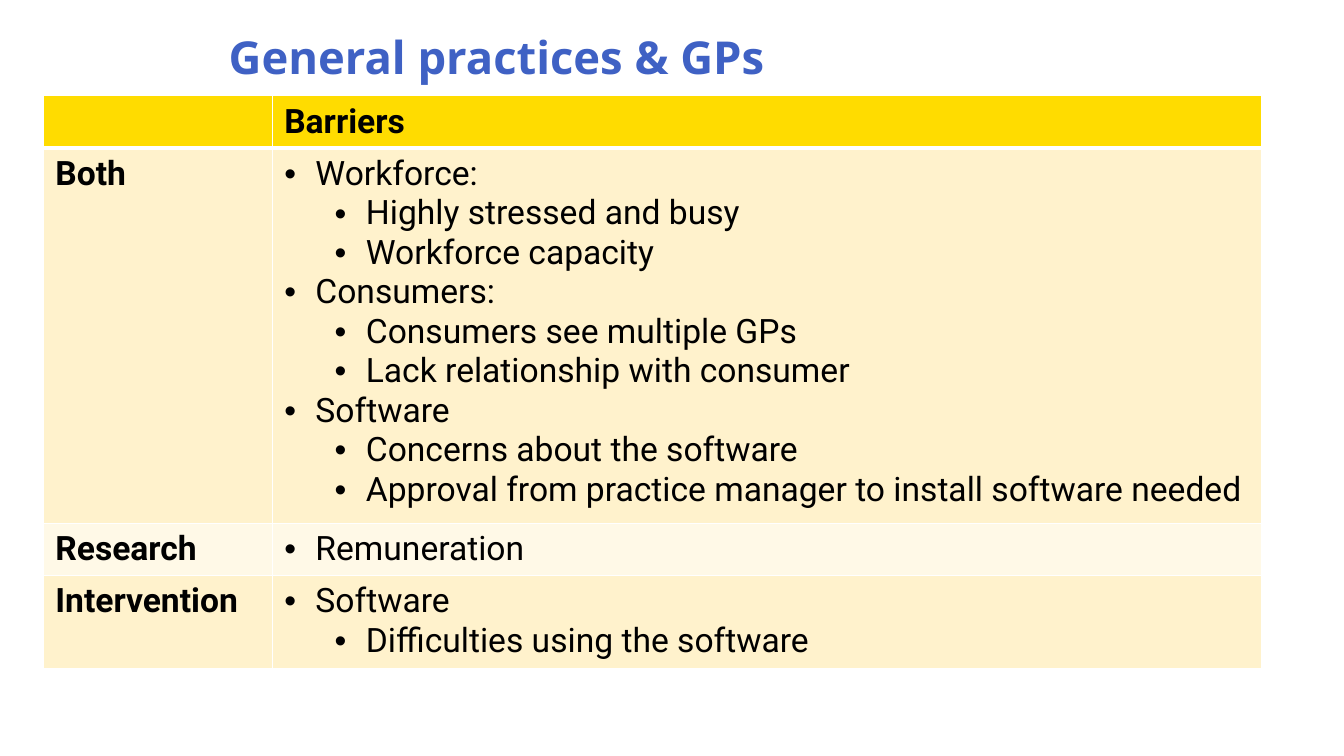
from lxml import etree
from pptx import Presentation
from pptx.dml.color import RGBColor
from pptx.enum.text import MSO_ANCHOR
from pptx.oxml.ns import qn
from pptx.util import Inches, Pt

MIDDLE = MSO_ANCHOR.MIDDLE

COLORS = {
    "title": "3F61C4",
    "text": "000000",
    "header": "FFDC00",
    "band": "FFF2CC",
    "light": "FFF9E7",
    "border": "FFFFFF",
}
COLUMN_WIDTHS = [2.27, 9.81]
ROW_HEIGHTS = [0.49, 3.63, 0.51, 0.9]
ROW_FILLS = ["header", "band", "light", "band"]
BARRIERS = [
    ("Both", [
        (0, "Workforce:"),
        (1, "Highly stressed and busy"),
        (1, "Workforce capacity"),
        (0, "Consumers:"),
        (1, "Consumers see multiple GPs"),
        (1, "Lack relationship with consumer"),
        (0, "Software"),
        (1, "Concerns about the software"),
        (1, "Approval from practice manager to install software needed"),
    ]),
    ("Research", [(0, "Remuneration")]),
    ("Intervention", [(0, "Software"), (1, "Difficulties using the software")]),
]


class SlideBuilder:
    """Holds the style and the current slide, and adds elements to it."""

    title_font = "Open Sans"
    body_font = "Roboto"
    body_size = 24

    def __init__(self, presentation):
        self.slide = presentation.slides.add_slide(presentation.slide_layouts[6])

    def style(self, paragraph, name, size, color, bold):
        font = paragraph.font
        font.name = name
        font.size = Pt(size)
        font.bold = bold
        font.color.rgb = RGBColor.from_string(COLORS[color])

    def title(self, text, left, top, width, height):
        shape = self.slide.shapes.add_textbox(
            Inches(left), Inches(top), Inches(width), Inches(height))
        frame = shape.text_frame
        frame.word_wrap = True
        frame.vertical_anchor = MIDDLE
        paragraph = frame.paragraphs[0]
        paragraph.text = text
        paragraph.line_spacing = 0.9
        self.style(paragraph, self.title_font, 32.4, "title", True)

    def bullet(self, paragraph, level):
        paragraph.level = level
        properties = paragraph._p.get_or_add_pPr()
        properties.set("marL", str(Inches(0.31 + 0.5 * level)))
        properties.set("indent", str(Inches(-0.31)))
        etree.SubElement(properties, qn("a:buFont")).set("typeface", "Arial")
        etree.SubElement(properties, qn("a:buChar")).set("char", "•")

    def borders(self, cell, is_header, is_below_header):
        properties = cell._tc.get_or_add_tcPr()
        widths = {"L": 1, "R": 1, "T": 3 if is_below_header else 1,
                  "B": 3 if is_header else 1}
        for side, width in widths.items():
            line = etree.SubElement(properties, qn(f"a:ln{side}"))
            line.set("w", str(Pt(width)))
            fill = etree.SubElement(line, qn("a:solidFill"))
            etree.SubElement(fill, qn("a:srgbClr")).set("val", COLORS["border"])

    def cell(self, cell, row, items, bold):
        cell.margin_left = cell.margin_right = Inches(0.12)
        cell.margin_top = cell.margin_bottom = Inches(0.06)
        self.borders(cell, row == 0, row == 1)
        cell.fill.solid()
        cell.fill.fore_color.rgb = RGBColor.from_string(COLORS[ROW_FILLS[row]])
        frame = cell.text_frame
        for index, (level, text) in enumerate(items):
            paragraph = frame.add_paragraph() if index else frame.paragraphs[0]
            paragraph.text = text
            if level is not None:
                self.bullet(paragraph, level)
            self.style(paragraph, self.body_font, self.body_size, "text", bold)

    def table(self, left, top, header, rows):
        table = self.slide.shapes.add_table(
            len(rows) + 1, len(COLUMN_WIDTHS), Inches(left), Inches(top),
            Inches(sum(COLUMN_WIDTHS)), Inches(sum(ROW_HEIGHTS))).table
        for column, width in zip(table.columns, COLUMN_WIDTHS):
            column.width = Inches(width)
        for row, height in zip(table.rows, ROW_HEIGHTS):
            row.height = Inches(height)
        self.cell(table.cell(0, 0), 0, [], True)
        self.cell(table.cell(0, 1), 0, [(None, header)], True)
        for row, (label, items) in enumerate(rows, 1):
            self.cell(table.cell(row, 0), row, [(None, label)], True)
            self.cell(table.cell(row, 1), row, items, False)


def main():
    presentation = Presentation()
    presentation.slide_width = Inches(13.33)
    presentation.slide_height = Inches(7.5)
    builder = SlideBuilder(presentation)
    builder.title("General practices & GPs", 2.17, 0.25, 8.64, 0.69)
    builder.table(0.43, 0.95, "Barriers", BARRIERS)
    presentation.save("out.pptx")


if __name__ == "__main__":
    main()
